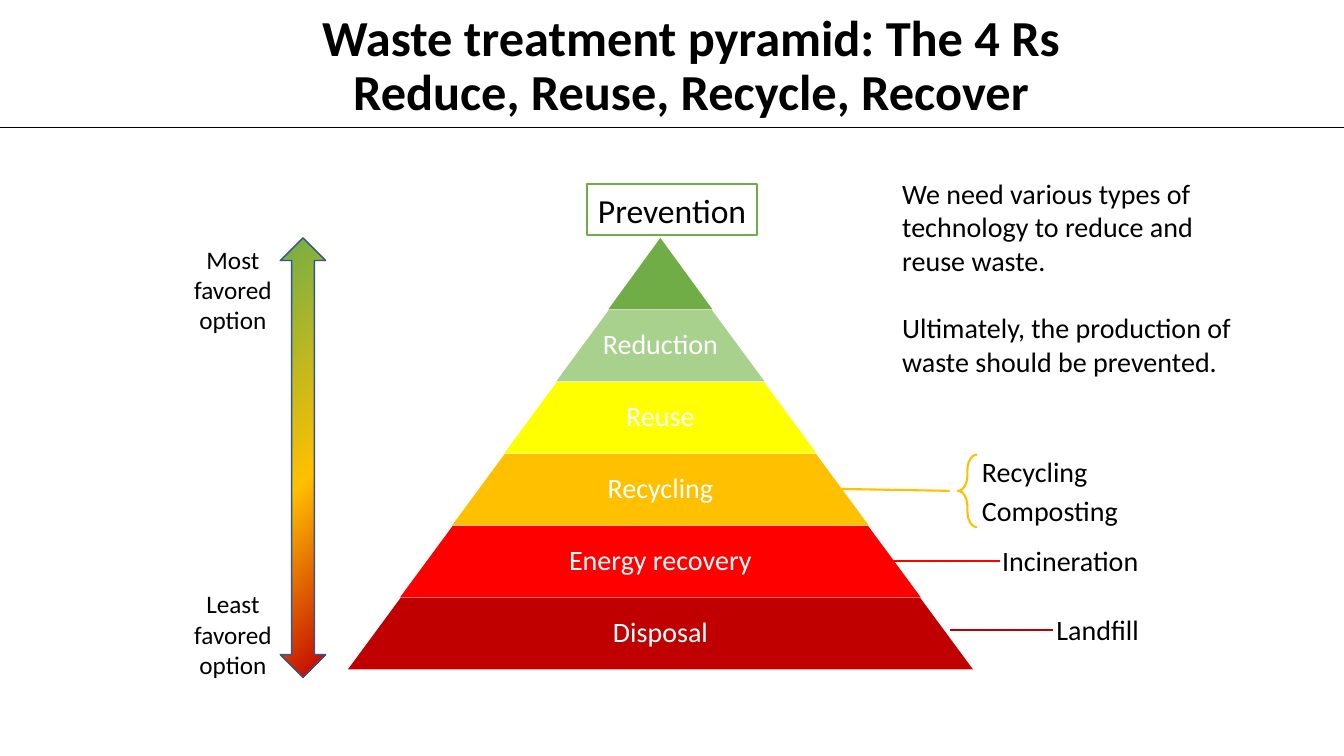
from lxml import etree
from pptx import Presentation
from pptx.dml.color import RGBColor
from pptx.enum.shapes import MSO_CONNECTOR as Link, MSO_SHAPE as Shape
from pptx.enum.text import MSO_ANCHOR as Anchor, MSO_AUTO_SIZE as Fit, PP_ALIGN as Align
from pptx.oxml import parse_xml
from pptx.oxml.ns import nsdecls, qn
from pptx.util import Inches, Pt

TITLE = ["Waste treatment pyramid: The 4 Rs", "Reduce, Reuse, Recycle, Recover"]
TIERS = [("", "green"), ("Reduction", "pale"), ("Reuse", "yellow"),
         ("Recycling", "amber"), ("Energy recovery", "red"), ("Disposal", "dark")]
ENDS = [("Most favored option", (1.63, 2.37, 1.36, 1.07)),
        ("Least favored option", (1.62, 5.79, 1.38, 1.07))]
NOTES = [("Incineration", (9.84, 5.34, 1.57, 0.44)),
         ("Landfill", (10.38, 6.03, 1.03, 0.44)),
         ("Recycling", (9.64, 4.46, 1.26, 0.44)),
         ("Composting", (9.64, 4.85, 1.56, 0.44))]
LINES = [((8.31, 4.85, 9.42, 4.87), "amber", 1.5),
         ((8.8, 5.57, 9.92, 5.57), "red", 1.5),
         ((9.42, 6.25, 10.44, 6.25), "dark", 1.5),
         ((0, 1.26, 13.33, 1.26), "black", 0.5)]
REMARKS = ["We need various types of technology to reduce and reuse waste.",
           "Ultimately, the production of waste should be prevented."]
FADE = [(0, "dark"), (45, "amber"), (100, "green")]

THEME = {
    "font": "Calibri",
    "color": {"green": "70AD47", "pale": "A9D18E", "yellow": "FFFF00",
              "amber": "FFC000", "red": "FF0000", "dark": "C00000",
              "black": "000000", "white": "FFFFFF", "blue": "325491"},
    "size": {"title": 36, "top": 24, "body": 20, "end": 18},
}
APEX, TOP, STEP, TALL = 6.55, 2.36, 0.714, 0.71
WIDEN, SLOPE, INNER = 1.033, 0.737, 0.65


def tint(name):
    return RGBColor.from_string(THEME["color"][name])


def place(box):
    return [Inches(n) for n in box]


def style(item, values):
    for name, value in values.items():
        setattr(item, name, value)


def write(shape, paras, size, color="black", bold=False, frame=None, para=None, gap=0):
    """Fill a shape with paragraphs; each is a list of lines."""
    text = shape.text_frame
    style(text, {"word_wrap": True, **(frame or {})})
    for i, lines in enumerate(paras):
        p = text.add_paragraph() if i else text.paragraphs[0]
        style(p, para or {})
        if i and gap:
            p.space_before = Pt(gap)
        for j, line in enumerate(lines):
            if j:
                p.add_line_break()
            run = p.add_run()
            run.text = line
            style(run.font, {"name": THEME["font"], "bold": bold,
                             "size": Pt(THEME["size"][size])})
            run.font.color.rgb = tint(color)
    return text


def draw(slide, kind, box, fill=None, line=None, width=1.5, adjust=()):
    shape = slide.shapes.add_shape(kind, *place(box))
    shape.shadow.inherit = False
    for i, value in enumerate(adjust):
        shape.adjustments[i] = value
    if fill:
        shape.fill.solid()
        shape.fill.fore_color.rgb = tint(fill)
    else:
        shape.fill.background()
    if line:
        shape.line.color.rgb = tint(line)
        shape.line.width = Pt(width)
    else:
        shape.line.fill.background()
    return shape


def fade(shape):
    """Give a shape a radial gradient centred on its lower right corner."""
    stops = "".join(f'<a:gs pos="{at * 1000}"><a:srgbClr val="{THEME["color"][name]}"/></a:gs>'
                    for at, name in FADE)
    grad = parse_xml(f'<a:gradFill {nsdecls("a")} rotWithShape="1"><a:gsLst>{stops}</a:gsLst>'
                     '<a:path path="circle"><a:fillToRect l="100000" t="100000"/></a:path>'
                     '</a:gradFill>')
    props = shape._element.spPr
    props.replace(props.find(qn("a:noFill")), grad)


def rule(slide, ends, color, width):
    line = slide.shapes.add_connector(Link.STRAIGHT, *place(ends))
    line.line.color.rgb = tint(color)
    line.line.width = Pt(width)
    etree.SubElement(line._element.spPr, qn("a:effectLst"))


def pyramid(slide):
    slim = {f"margin_{side}": Inches(0.03) for side in ("left", "right", "top", "bottom")}
    for i, (name, color) in enumerate(TIERS):
        wide, y = WIDEN * (i + 1), TOP + STEP * i
        draw(slide, Shape.TRAPEZOID, (APEX - wide / 2, y, wide, TALL), color, adjust=[SLOPE])
        if name:
            inner = wide * INNER
            box = slide.shapes.add_textbox(*place((APEX - inner / 2, y, inner, TALL)))
            write(box, [[name]], "body", "white",
                  frame={"vertical_anchor": Anchor.MIDDLE, **slim},
                  para={"alignment": Align.CENTER, "line_spacing": 0.9})


def main():
    deck = Presentation()
    style(deck, {"slide_width": Inches(13.33), "slide_height": Inches(7.5)})
    slide = deck.slides.add_slide(deck.slide_layouts[6])
    text = slide.shapes.add_textbox
    center = {"alignment": Align.CENTER}
    grow = {"auto_size": Fit.SHAPE_TO_FIT_TEXT}
    tight = {"word_wrap": False, **grow}

    head = write(text(*place((2.35, 0.07, 8.62, 1.19))), [TITLE], "title", bold=True,
                 frame={"vertical_anchor": Anchor.MIDDLE},
                 para={"line_spacing": 0.9, **center})
    head.paragraphs[0]._p.get_or_add_pPr().set("marL", str(Inches(0.39)))

    pyramid(slide)
    fade(draw(slide, Shape.UP_DOWN_ARROW, (2.78, 2.36, 0.45, 4.36), line="blue", width=1))
    for name, box in ENDS:
        write(text(*place(box)), [[name]], "end", frame=grow, para=center)
    write(draw(slide, Shape.RECTANGLE, (5.82, 1.83, 1.69, 0.5), line="green"),
          [["Prevention"]], "top", frame=tight, para=center)
    for name, box in NOTES:
        write(text(*place(box)), [[name]], "body", frame=tight)
    draw(slide, Shape.LEFT_BRACE, (9.5, 4.51, 0.19, 0.72), line="amber", adjust=[0.798, 0.5])
    for ends, color, width in LINES:
        rule(slide, ends, color, width)
    write(text(*place((8.85, 1.7, 3.73, 2.12))), [[line] for line in REMARKS],
          "body", frame=grow, gap=24)
    deck.save("out.pptx")


if __name__ == "__main__":
    main()
